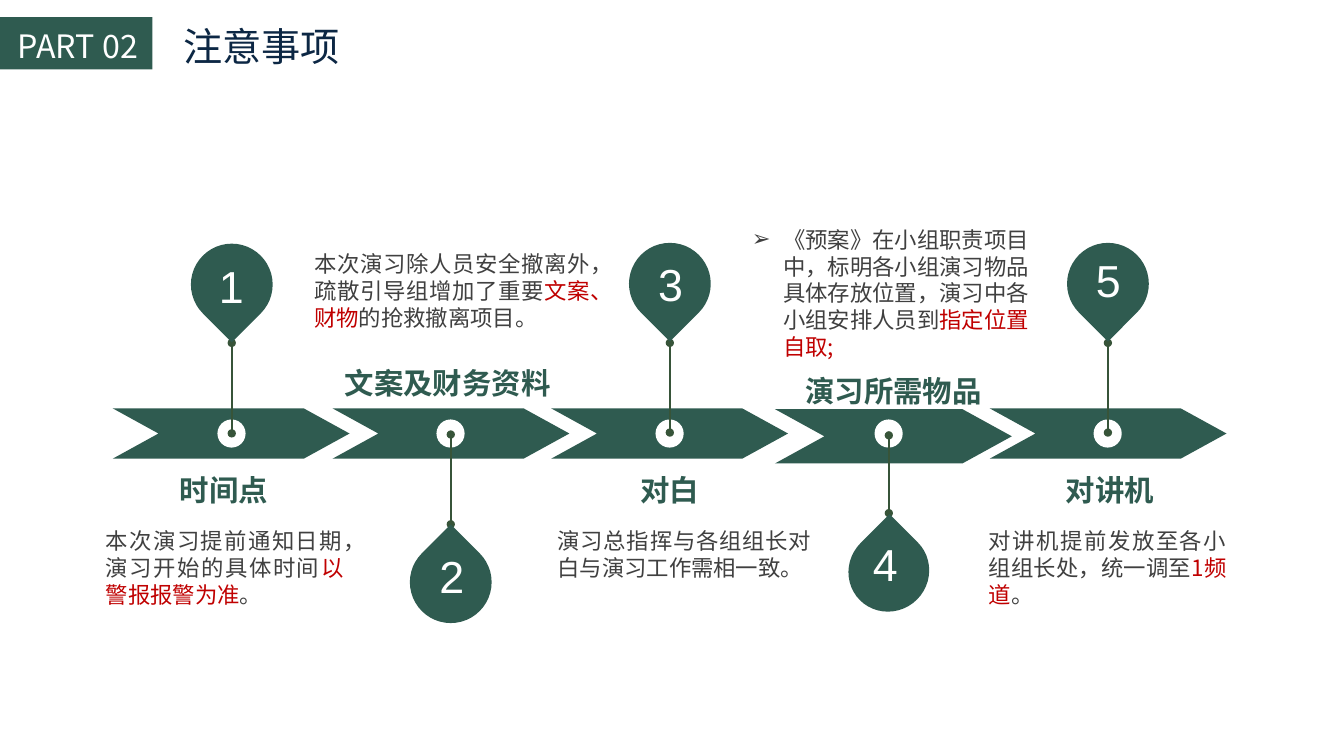
from lxml import etree
from pptx import Presentation
from pptx.dml.color import RGBColor
from pptx.enum.shapes import MSO_CONNECTOR, MSO_SHAPE
from pptx.enum.text import MSO_ANCHOR, PP_ALIGN
from pptx.oxml.ns import qn
from pptx.util import Cm, Pt

COLORS = {"green": "2F5B50", "stem": "375439", "navy": "0C2744",
          "gray": "404040", "red": "C00000", "white": "FFFFFF"}
CJK = "Noto Sans CJK SC"

presentation = Presentation()
presentation.slide_width, presentation.slide_height = Cm(33.87), Cm(19.05)
slide = presentation.slides.add_slide(presentation.slide_layouts[6])


def add_text(runs, left, top, width, height, size, color="gray", font=CJK, bold=False,
             align=PP_ALIGN.LEFT, anchor=MSO_ANCHOR.TOP, wrap=True, inset=(0, 0), bullet=None):
    """Add a text box; runs is a string or a list of (text, color)."""
    frame = slide.shapes.add_textbox(Cm(left), Cm(top), Cm(width), Cm(height)).text_frame
    frame.word_wrap, frame.vertical_anchor = wrap, anchor
    frame.margin_left = frame.margin_right = Cm(inset[0])
    frame.margin_top = frame.margin_bottom = Cm(inset[1])
    paragraph = frame.paragraphs[0]
    paragraph.alignment = align
    if bullet:
        properties = paragraph._p.get_or_add_pPr()
        properties.set("marL", str(Cm(0.79)))
        properties.set("indent", str(-Cm(0.79)))
        etree.SubElement(properties, qn("a:buFont")).set("typeface", "Arial")
        etree.SubElement(properties, qn("a:buChar")).set("char", bullet)
    for text, run_color in [(runs, color)] if isinstance(runs, str) else runs:
        run = paragraph.add_run()
        run.text = text
        run.font.size, run.font.bold, run.font.name = Pt(size), bold, font
        run.font.color.rgb = RGBColor.from_string(COLORS[run_color])
        etree.SubElement(run._r.get_or_add_rPr(), qn("a:ea")).set("typeface", font)


def add_filled(kind, left, top, width, height, color="green"):
    shape = slide.shapes.add_shape(kind, Cm(left), Cm(top), Cm(width), Cm(height))
    shape.shadow.inherit = False
    shape.fill.solid()
    shape.fill.fore_color.rgb = RGBColor.from_string(COLORS[color])
    shape.line.fill.background()
    return shape


# Title bar
add_filled(MSO_SHAPE.RECTANGLE, 0, 0.43, 3.84, 1.32)
add_text("PART 02", 0.2, 0.53, 3.68, 1.22, 23, "white", wrap=False, inset=(0.25, 0.13))
add_text("注意事项", 4.37, 0.43, 4.47, 1.45, 28, "navy", wrap=False, inset=(0.25, 0.13))

# Timeline content, in cm: arrow (left, top, height), stem (pin end, arrow end),
# pin (top, height, rotation), number (centre, top), heading (centre, top, width)
UP, DOWN = 135, 315
steps = [
    dict(arrow=(2.84, 10.29, 1.27), stem=(8.64, 10.92), pin=(6.14, 2.06, UP), number=(5.83, 6.38),
         heading=("时间点", 5.64, 11.89, 2.24), body=(2.67, 13.28, 5.99, 2.06),
         runs=[("本次演习提前通知日期，演习开始的具体时间", "gray"),
               ("以警报报警为准", "red"), ("。", "gray")]),
    dict(arrow=(8.38, 10.29, 1.27), stem=(13.21, 10.95), pin=(13.64, 2.06, DOWN), number=(11.39, 13.69),
         heading=("文案及财务资料", 11.28, 9.19, 5.23), body=(7.92, 6.3, 6.96, 2.06),
         runs=[("本次演习除人员安全撤离外，疏散引导组增加了重要", "gray"),
               ("文案、财物", "red"), ("的抢救撤离项目。", "gray")]),
    dict(arrow=(13.89, 10.29, 1.27), stem=(8.64, 10.9), pin=(6.12, 2.06, UP), number=(16.9, 6.35),
         heading=("对白", 16.88, 11.89, 1.5), body=(14.05, 13.28, 6.4, 1.37),
         runs=[("演习总指挥与各组组长对白与演习工作需相一致。", "gray")]),
    dict(arrow=(19.53, 10.31, 1.37), stem=(12.93, 10.97), pin=(13.39, 2.01, DOWN), number=(22.31, 13.39),
         heading=("演习所需物品", 22.52, 9.4, 4.5), body=(18.95, 5.69, 7.14, 3.43), bullet="➢",
         runs=[("《预案》在小组职责项目中，标明各小组演习物品具体存放位置，演习中各小组安排人员到", "gray"),
               ("指定位置自取;", "red")]),
    dict(arrow=(24.94, 10.29, 1.27), stem=(8.64, 10.9), pin=(6.12, 2.06, UP), number=(27.93, 6.25),
         heading=("对讲机", 27.97, 11.89, 2.24), body=(24.92, 13.28, 5.99, 2.06),
         runs=[("对讲机提前发放至各小组组长处，统一调至", "gray"), ("1频道", "red"), ("。", "gray")]),
]

for index, step in enumerate(steps):
    center = 5.84 + 5.52 * index

    # Arrow and its white dot
    left, top, height = step["arrow"]
    arrow = add_filled(MSO_SHAPE.NOTCHED_RIGHT_ARROW, left, top, 5.97, height)
    arrow.adjustments[0], arrow.adjustments[1] = 1, 0.91
    add_filled(MSO_SHAPE.OVAL, center - 0.36, 10.57, 0.71, 0.71, "white")

    # Stem with round ends
    start, end = step["stem"]
    stem = slide.shapes.add_connector(MSO_CONNECTOR.STRAIGHT, Cm(center), Cm(start), Cm(center), Cm(end))
    stem.line.width = Pt(1.5)
    stem.line.color.rgb = RGBColor.from_string(COLORS["stem"])
    for tag in ("a:headEnd", "a:tailEnd"):
        etree.SubElement(stem.line._get_or_add_ln(), qn(tag)).set("type", "oval")
    etree.SubElement(stem._element.spPr, qn("a:effectLst"))

    # Numbered pin
    top, height, rotation = step["pin"]
    pin = add_filled(MSO_SHAPE.TEAR, center - 1.03, top, 2.06, height)
    pin.rotation = rotation
    middle, top = step["number"]
    add_text(str(index + 1), middle - 0.75, top, 1.5, 1.63, 32, "white", font="Arial",
             align=PP_ALIGN.CENTER, inset=(0.25, 0.13))

    # Heading and description
    title, middle, top, width = step["heading"]
    add_text(title, middle - width / 2, top, width, 0.89, 21, "green", bold=True,
             align=PP_ALIGN.CENTER, anchor=MSO_ANCHOR.MIDDLE, wrap=False)
    bullet = step.get("bullet")
    add_text(step["runs"], *step["body"], 16, bullet=bullet,
             align=PP_ALIGN.LEFT if bullet else PP_ALIGN.JUSTIFY)

presentation.save("out.pptx")
